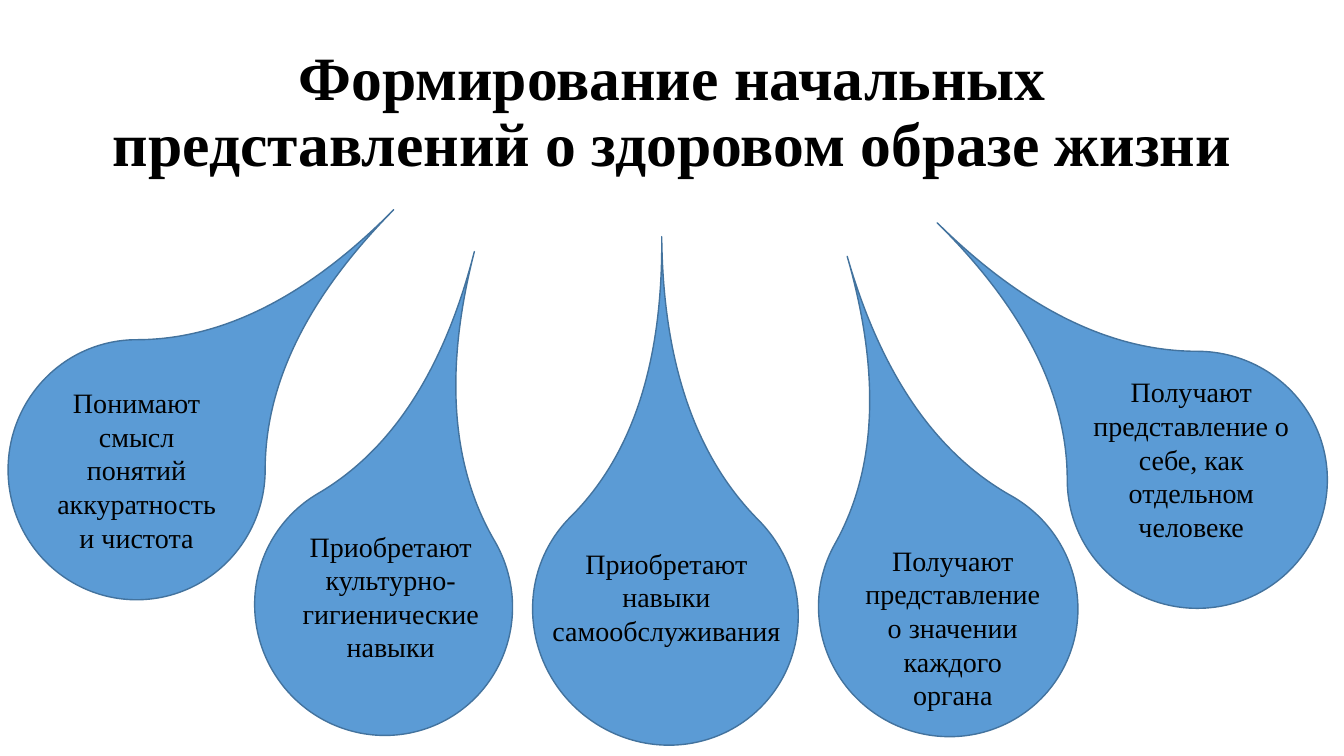
"""Build a slide with five teardrops on forming a healthy lifestyle."""
from typing import NamedTuple

import pptx
import pptx.dml.color
import pptx.enum.shapes
import pptx.enum.text
import pptx.util

Inches = pptx.util.Inches
Pt = pptx.util.Pt
ANCHOR = pptx.enum.text.MSO_ANCHOR
FONT = "Times New Roman"


class Drop(NamedTuple):
    left: float
    top: float
    width: float
    height: float
    rotation: float
    text: str = ""


class Label(NamedTuple):
    left: float
    top: float
    width: float
    height: float
    text: str


DROPS = [
    Drop(0.08, 3.37, 2.55, 2.58, 0, "Понимают смысл понятий аккуратность и чистота"),
    Drop(2.53, 4.72, 2.55, 2.58, 329.7),
    Drop(5.3, 4.74, 2.6, 2.67, 315.2),
    Drop(8.13, 4.74, 2.55, 2.58, 299.3),
    Drop(10.6, 3.47, 2.55, 2.58, 270),
]
LABELS = [
    Label(2.78, 5.2, 2.19, 1.45, "Приобретают культурно-гигиенические навыки"),
    Label(8.47, 5.34, 1.96, 1.78, "Получают представление о значении каждого органа"),
    Label(5.33, 5.37, 2.56, 1.11, "Приобретают навыки самообслуживания"),
    Label(10.69, 3.67, 2.25, 1.78, "Получают представление о себе, как отдельном человеке"),
]


def color(value: str) -> pptx.dml.color.RGBColor:
    return pptx.dml.color.RGBColor.from_string(value)


def write(sp, text: str, size: float, anchor, bold: bool = False) -> None:
    tf = sp.text_frame
    tf.text = text
    tf.word_wrap = True
    tf.vertical_anchor = anchor
    p = tf.paragraphs[0]
    p.alignment = pptx.enum.text.PP_ALIGN.CENTER
    for r in p.runs:
        r.font.name = FONT
        r.font.size = Pt(size)
        r.font.bold = bold
        r.font.color.rgb = color("000000")


def add_title(s, text: str) -> None:
    sp = s.shapes.title
    sp.left, sp.top, sp.width, sp.height = map(Inches, (0.92, 0.4, 11.5, 1.45))
    write(sp, text, 44, ANCHOR.MIDDLE, bold=True)
    sp.text_frame.auto_size = pptx.enum.text.MSO_AUTO_SIZE.NONE
    sp.text_frame.paragraphs[0].line_spacing = 0.9


def add_drop(s, drop: Drop) -> None:
    sp = s.shapes.add_shape(pptx.enum.shapes.MSO_SHAPE.TEAR, *map(Inches, drop[:4]))
    sp.adjustments[0] = 2
    sp.rotation = drop.rotation
    sp.shadow.inherit = False
    sp.fill.solid()
    sp.fill.fore_color.rgb = color("5B9BD5")
    sp.line.color.rgb = color("43739E")
    sp.line.width = Pt(1)
    if drop.text:
        write(sp, drop.text, 20, ANCHOR.MIDDLE)


def add_label(s, label: Label) -> None:
    sp = s.shapes.add_textbox(*map(Inches, label[:4]))
    write(sp, label.text, 20, ANCHOR.TOP)
    sp.text_frame.auto_size = pptx.enum.text.MSO_AUTO_SIZE.SHAPE_TO_FIT_TEXT


def main() -> None:
    prs = pptx.Presentation()
    prs.slide_width, prs.slide_height = Inches(13.33), Inches(7.5)
    s = prs.slides.add_slide(prs.slide_layouts[5])
    add_title(s, "Формирование начальных представлений о здоровом образе жизни")
    for drop in DROPS:
        add_drop(s, drop)
    for label in LABELS:
        add_label(s, label)
    prs.save("out.pptx")


if __name__ == "__main__":
    main()
